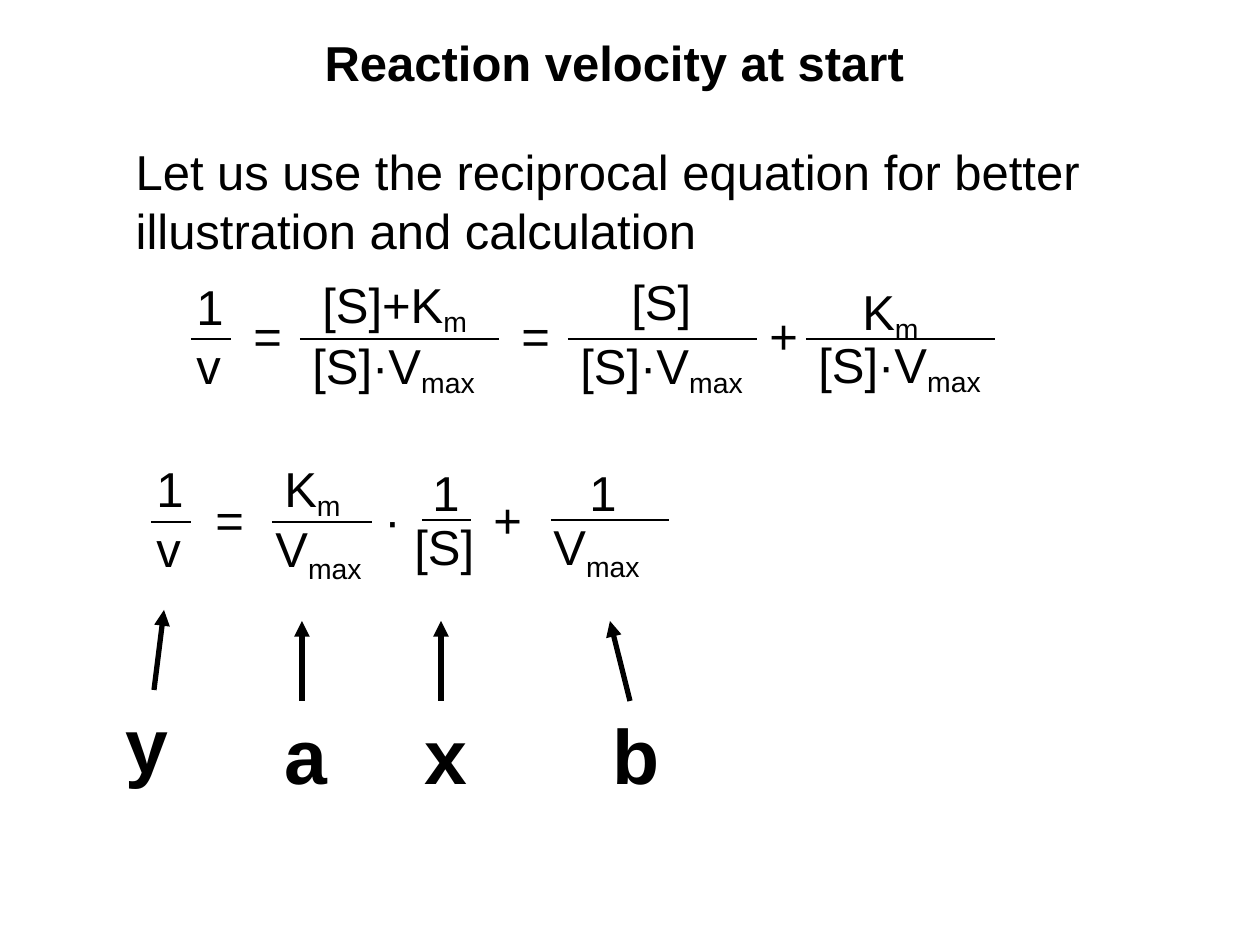
from pptx import Presentation
from pptx.dml.color import RGBColor
from pptx.enum.shapes import MSO_CONNECTOR
from pptx.enum.text import MSO_ANCHOR, MSO_AUTO_SIZE, PP_ALIGN
from pptx.oxml.ns import qn
from pptx.util import Pt
from lxml.etree import SubElement

PX = 914400 / 126  # EMU in one px
BLACK = RGBColor(0x00, 0x00, 0x00)
WHITE = RGBColor(0xFF, 0xFF, 0xFF)

# Terms as (base, subscript), with the width of their boxes
ONE, V, S, KM = ("1", ""), ("v", ""), ("[S]", ""), ("K", "m")
S_KM, S_VMAX, VMAX = ("[S]+K", "m"), ("[S]·V", "max"), ("V", "max")
EQUALS, PLUS, DOT = ("=", ""), ("+", ""), ("·", "")
WIDTHS = {ONE: 53, V: 50, S: 86, KM: 86, S_KM: 174, S_VMAX: 197, VMAX: 121,
          EQUALS: 54, PLUS: 54, DOT: 42}


def emu(*lengths):
    return [round(n * PX) for n in lengths]


class EquationSlide:
    font, size, label_size = "Arial", 28, 44
    term_height, label_height = 72, 105

    def __init__(self, prs):
        self.s = prs.slides.add_slide(prs.slide_layouts[1])
        self.s.background.fill.solid()
        self.s.background.fill.fore_color.rgb = WHITE

    def run(self, p, text, size, bold=False, baseline=0):
        r = p.add_run()
        r.text = text
        r.font.name, r.font.size, r.font.bold = self.font, Pt(size), bold
        r.font.color.rgb = BLACK
        if baseline:
            r._r.get_or_add_rPr().set("baseline", str(baseline * 1000))

    def frame(self, sp):
        tf = sp.text_frame
        tf.word_wrap = False
        tf.auto_size = MSO_AUTO_SIZE.SHAPE_TO_FIT_TEXT
        tf.vertical_anchor = MSO_ANCHOR.TOP
        return tf

    def placeholder(self, idx, box, lines, bold=False):
        sp = self.s.placeholders[idx]
        sp.left, sp.top, sp.width, sp.height = emu(*box)
        tf = self.frame(sp)
        for i, line in enumerate(lines):
            p = tf.add_paragraph() if i else tf.paragraphs[0]
            p.alignment = PP_ALIGN.LEFT
            p.space_before = Pt(0)
            pPr = p._p.get_or_add_pPr()
            pPr.set("marL", "0")
            pPr.set("indent", "0")
            SubElement(pPr, qn("a:buNone"))
            self.run(p, line, self.size, bold)

    def text_box(self, x, y, w, h):
        return self.frame(self.s.shapes.add_textbox(*emu(x, y, w, h))).paragraphs[0]

    def term(self, term, x, y, baseline=-18):
        base, sub = term
        p = self.text_box(x, y, WIDTHS[term], self.term_height)
        self.run(p, base, self.size)
        if sub:
            self.run(p, sub, self.size, baseline=baseline)

    def label(self, text, x, y, w):
        p = self.text_box(x, y, w, self.label_height)
        self.run(p, text, self.label_size, bold=True)

    def line(self, x1, y1, x2, y2, width=1.5, arrow=False):
        c = self.s.shapes.add_connector(MSO_CONNECTOR.STRAIGHT, *emu(x1, y1, x2, y2))
        c.line.color.rgb = BLACK
        c.line.width = Pt(width)
        if arrow:
            SubElement(c.line._get_or_add_ln(), qn("a:tailEnd"), type="triangle")
        SubElement(c._element.spPr, qn("a:effectLst"))

    def fraction(self, bar, top, bottom):
        x1, x2, y = bar
        self.term(*top)
        self.term(*bottom)
        self.line(x1, y, x2, y)


def main():
    prs = Presentation()
    prs.slide_width, prs.slide_height = emu(1260, 945)
    slide = EquationSlide(prs)

    # Title and introduction
    slide.placeholder(0, (312, 26, 612, 72), ["Reaction velocity at start"], bold=True)
    slide.placeholder(1, (123, 135, 982, 131), [
        "Let us use the reciprocal equation for better",
        "illustration and calculation"])

    # Reciprocal equation, then the same as a straight line
    for bar, top, bottom in [
        ((191, 231, 339), (ONE, 184, 270), (V, 184, 329)),
        ((300, 499, 339), (S_KM, 310, 268), (S_VMAX, 300, 329)),
        ((568, 757, 339), (S, 619, 265), (S_VMAX, 568, 329)),
        ((806, 995, 339), (KM, 850, 275), (S_VMAX, 806, 328)),
        ((151, 191, 522), (ONE, 144, 452), (V, 144, 512)),
        ((272, 372, 522), (KM, 272, 452), (VMAX, 263, 512, -25)),
        ((422, 471, 520), (ONE, 420, 456), (S, 402, 510)),
        ((551, 669, 520), (ONE, 577, 456), (VMAX, 541, 510, -25)),
    ]:
        slide.fraction(bar, top, bottom)

    # Operators of both rows
    for y, operators in [
        (299, [(EQUALS, 241), (EQUALS, 509), (PLUS, 757)]),
        (483, [(EQUALS, 203), (DOT, 372), (PLUS, 481)]),
    ]:
        for operator, x in operators:
            slide.term(operator, x, y)

    # Labels of the line equation, each with its arrow
    for text, x, y, w, tail_x, head_x in [
        ("y", 113, 690, 68, 154, 164),
        ("a", 272, 701, 68, 302, 302),
        ("x", 412, 701, 68, 441, 441),
        ("b", 600, 701, 72, 630, 610),
    ]:
        slide.label(text, x, y, w)
        slide.line(tail_x, y, head_x, y - 80, width=3, arrow=True)

    prs.save("out.pptx")


if __name__ == "__main__":
    main()
